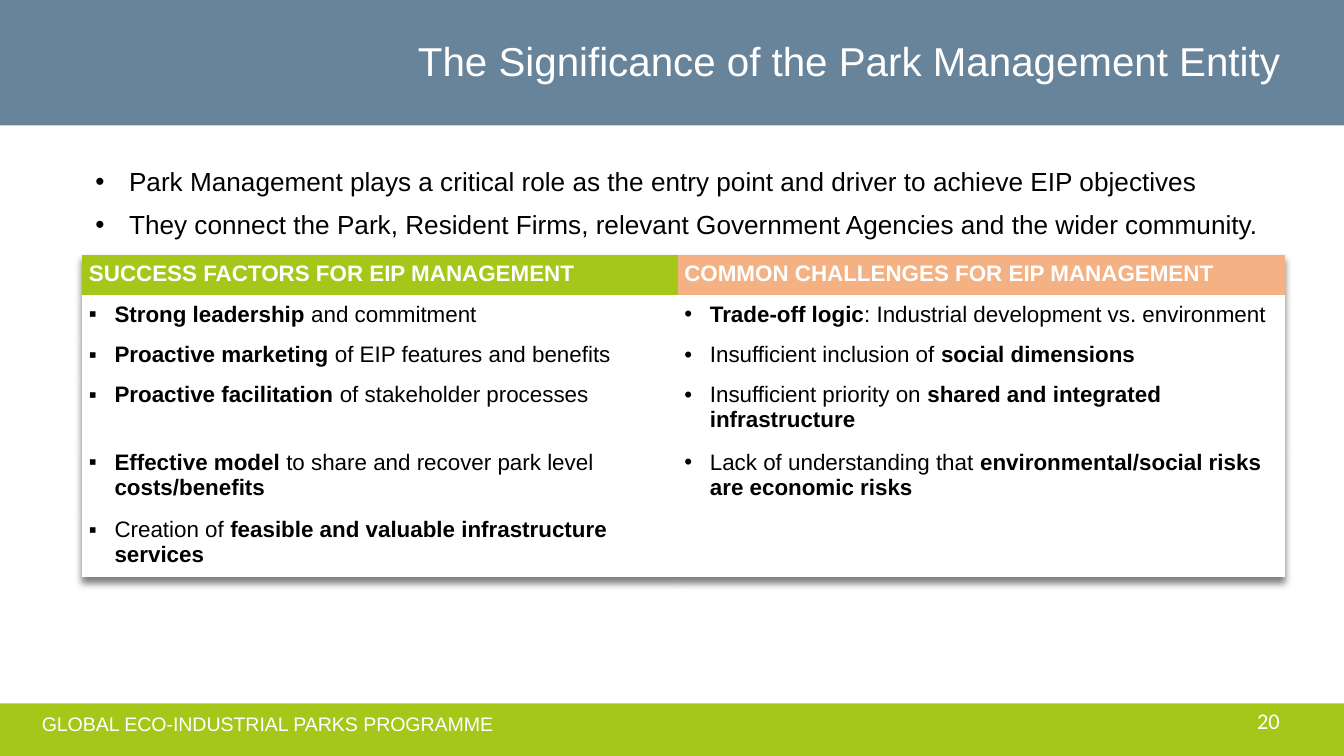
from dataclasses import dataclass

from lxml.etree import SubElement as Sub
from pptx import Presentation
from pptx.dml.color import RGBColor as RGB
from pptx.enum.shapes import MSO_SHAPE as Shape
from pptx.enum.text import MSO_ANCHOR as Anchor, PP_ALIGN as Align
from pptx.oxml import parse_xml
from pptx.oxml.ns import qn
from pptx.util import Inches, Pt

UNIT = 0.1  # inches per grid column and row
COLS, ROWS = 100, 56.25
LEFT, WIDE = 6.12, 89.5  # content column

NO_GRID = "{2D5ABB26-0587-4C30-8999-92F81FD0307C}"
SHADOW = """<a:effectLst xmlns:a="http://schemas.openxmlformats.org/drawingml/2006/main">
<a:outerShdw blurRad="50800" dist="38100" dir="5400000" algn="t" rotWithShape="0">
<a:srgbClr val="000000"><a:alpha val="50000"/></a:srgbClr></a:outerShdw></a:effectLst>"""


@dataclass(frozen=True)
class Theme:
    font: str = "Arial"
    digits: str = "Calibri"
    green: str = "A5C71A"
    blue: str = "68849B"
    peach: str = "F4B183"
    white: str = "FFFFFF"
    black: str = "000000"
    title: float = 21.6
    body: float = 14
    cell: float = 12
    foot: float = 10.5


THEME = Theme()


def grid(*cells):
    return [Inches(n * UNIT) for n in cells]


def write(frame, *lines, size, color=THEME.black, font=THEME.font, align=Align.LEFT,
          bullet=None, indent=0, gap=0, spacing=None):
    """Fill a text frame; parts of a line between asterisks are bold."""
    frame.word_wrap = True
    for i, line in enumerate(lines):
        para = frame.add_paragraph() if i else frame.paragraphs[0]
        para.alignment = align
        if bullet:
            props = para._p.get_or_add_pPr()
            props.set("marL", str(Inches(indent)))
            props.set("indent", str(-Inches(indent)))
            Sub(props, qn("a:buFont")).set("typeface", THEME.font)
            Sub(props, qn("a:buChar")).set("char", bullet)
        if i and gap:
            para.space_before = Pt(gap)
        if spacing:
            para.line_spacing = spacing
        for j, part in enumerate(line.split("*")):
            if part:
                run = para.add_run()
                run.text = part
                run.font.name, run.font.size = font, Pt(size)
                run.font.bold = j % 2 == 1
                run.font.color.rgb = RGB.from_string(color)


class Page:
    def __init__(self, deck, theme):
        self.theme = theme
        self.slide = deck.slides.add_slide(deck.slide_layouts[5])
        self.shapes = self.slide.shapes

    def band(self, top, height, color):
        box = self.shapes.add_shape(Shape.RECTANGLE, *grid(0, top, COLS, height))
        box.shadow.inherit = False
        box.fill.solid()
        box.fill.fore_color.rgb = RGB.from_string(color)
        box.line.fill.background()

    def title(self, place, text):
        head = self.shapes.title
        self.shapes._spTree.append(head._element)  # in front of the bands
        head.left, head.top, head.width, head.height = grid(*place)
        head.text_frame.vertical_anchor = Anchor.MIDDLE
        write(head.text_frame, text, size=self.theme.title,
              color=self.theme.white, spacing=0.9)

    def text(self, place, *lines, anchor=Anchor.MIDDLE, **style):
        frame = self.shapes.add_textbox(*grid(*place)).text_frame
        frame.vertical_anchor = anchor
        write(frame, *lines, **style)

    def table(self, place, widths, heights, heads, fills, marks, rows):
        """Rows of height 0 grow to fit their text."""
        holder = self.shapes.add_table(len(heights), len(widths), *grid(*place))
        table = holder.table
        table.first_row = table.horz_banding = False
        props = table._tbl.tblPr
        props.find(qn("a:tableStyleId")).text = NO_GRID
        props.insert(0, parse_xml(SHADOW))
        for col, width in zip(table.columns, grid(*widths)):
            col.width = width
        for row, height in zip(table.rows, grid(*heights)):
            row.height = height
        holder.height = grid(*place)[3]
        for c, (head, fill, mark) in enumerate(zip(heads, fills, marks)):
            self.cell(table.cell(0, c), f"*{head}*", fill, color=self.theme.white)
            for r, row in enumerate(rows, 1):
                self.cell(table.cell(r, c), row[c], self.theme.white,
                          bullet=mark if row[c] else None, indent=0.19)

    def cell(self, cell, text, fill, **style):
        cell.margin_left = cell.margin_right = Inches(0.05)
        cell.margin_top = cell.margin_bottom = Inches(0.05)
        cell.fill.solid()
        cell.fill.fore_color.rgb = RGB.from_string(fill)
        write(cell.text_frame, text, size=self.theme.cell, **style)


def main():
    deck = Presentation()
    deck.slide_width, deck.slide_height = grid(COLS, ROWS)
    look = THEME
    page = Page(deck, look)

    page.band(51.55, 4.7, look.green)
    page.band(-0.3, 9.7, look.blue)
    page.text((2.13, 51.84, 44.6, 4), "GLOBAL ECO-INDUSTRIAL PARKS PROGRAMME",
              size=look.foot, color=look.white)
    page.band(9.34, 43, look.white)

    page.title((30.1, 1, 67.6, 7.4), "The Significance of the Park Management Entity")
    page.text(
        (LEFT, 11.84, WIDE, 40.3),
        "Park Management plays a critical role as the entry point and driver to achieve EIP objectives",
        "They connect the Park, Resident Firms, relevant Government Agencies and the wider community.",
        anchor=Anchor.TOP, size=look.body, bullet="•", indent=0.25, gap=6)
    page.text((73.7, 52.14, 22.5, 3), "20", size=look.cell, color=look.white,
              font=look.digits, align=Align.RIGHT)

    page.table(
        (LEFT, 18.94, WIDE, 24), widths=(44.3, 45.2), heights=(0, 0, 0, 4.4, 0, 0),
        heads=("SUCCESS FACTORS FOR EIP MANAGEMENT", "COMMON CHALLENGES FOR EIP MANAGEMENT"),
        fills=(look.green, look.peach), marks="▪•",
        rows=[
            ("*Strong leadership *and commitment",
             "*Trade-off logic*: Industrial development vs. environment"),
            ("*Proactive marketing *of EIP features and benefits",
             "Insufficient inclusion of *social dimensions*"),
            ("*Proactive facilitation *of stakeholder processes",
             "Insufficient priority on *shared and integrated infrastructure*"),
            ("*Effective model *to share and recover park level *costs/benefits*",
             "Lack of understanding that *environmental/social risks are economic risks*"),
            ("Creation of *feasible and valuable infrastructure services*", ""),
        ])
    deck.save("out.pptx")


if __name__ == "__main__":
    main()
